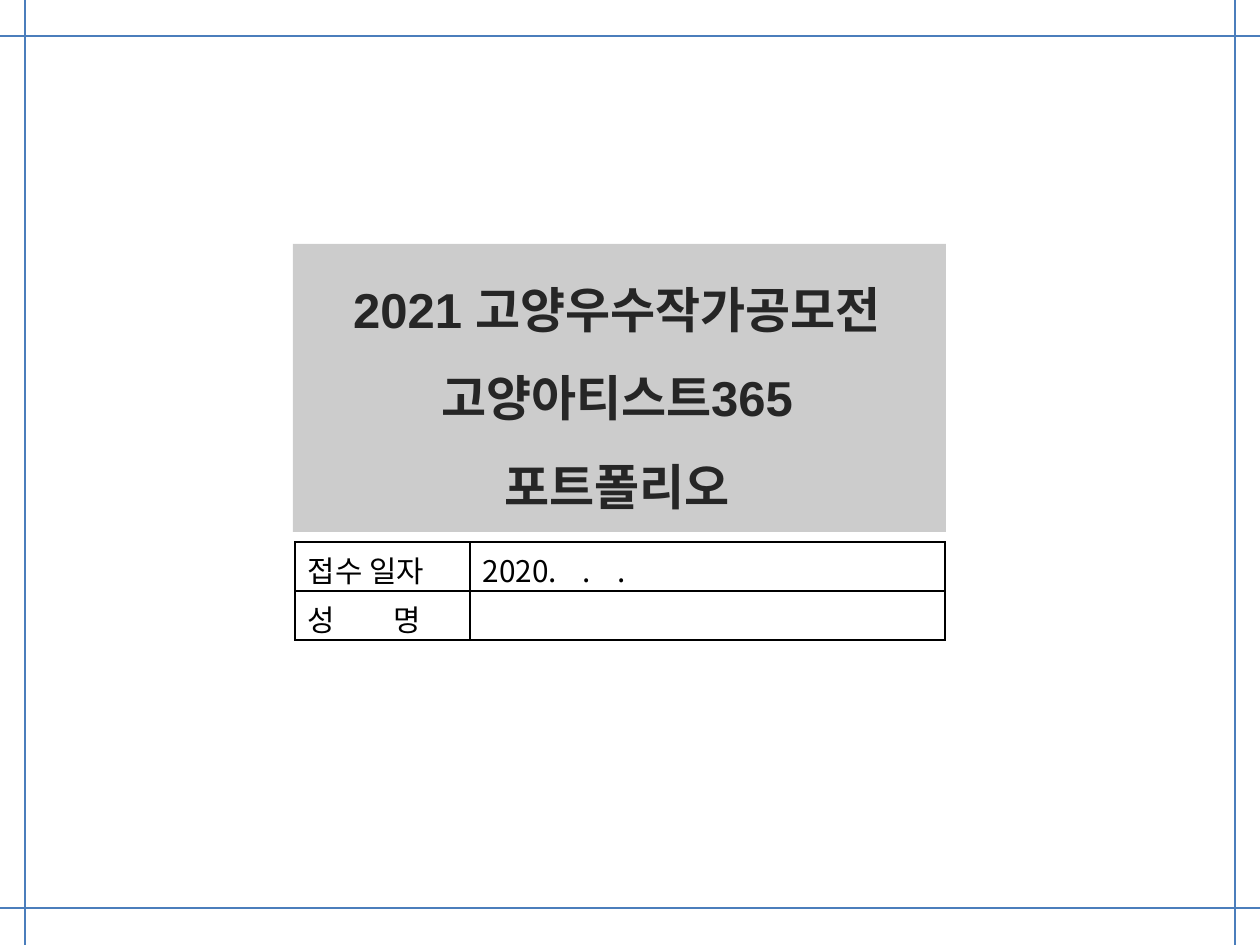
from dataclasses import dataclass

from pptx import Presentation, util as u
from pptx.dml.color import RGBColor
from pptx.enum import shapes, text
from pptx.oxml.ns import qn
from lxml import etree

EMU_PER_PX = 914400 // 126
WIDTH, HEIGHT = 1260, 945


@dataclass(frozen=True)
class Theme:
    guide: str = "4B7EBC"
    panel: str = "000000"
    panel_alpha: int = 20
    title: str = "262626"
    ink: str = "000000"
    title_font: str = "Arial"
    table_font: str = "Noto Sans CJK KR"
    title_size: int = 28
    table_size: int = 17
    guide_width: float = 0.75
    border_width: int = 1


THEME = Theme()
TITLE_LINES = ["2021 고양우수작가공모전", "고양아티스트365", "포트폴리오"]

# Each cell: text and its tab stops in px
FORM_ROWS = [
    [("접수 일자", []), ("2020.\t.\t.", [100, 135])],
    [("성\t명", [86]), ("", [])],
]


def px(value):
    return u.Emu(value * EMU_PER_PX)


def set_font(paragraph, name, size, color, bold=False):
    font = paragraph.font
    font.name, font.size, font.bold = name, u.Pt(size), bold
    font.color.rgb = RGBColor.from_string(color)


def add_guide(slide, x1, y1, x2, y2):
    line = slide.shapes.add_connector(
        shapes.MSO_CONNECTOR.STRAIGHT, px(x1), px(y1), px(x2), px(y2))
    line.line.color.rgb = RGBColor.from_string(THEME.guide)
    line.line.width = u.Pt(THEME.guide_width)
    etree.SubElement(line._element.spPr, qn("a:effectLst"))


def add_title(slide):
    group = slide.shapes.add_group_shape()

    # Translucent panel
    panel = group.shapes.add_shape(
        shapes.MSO_SHAPE.RECTANGLE, px(293), px(244), px(653), px(288))
    panel.shadow.inherit = False
    panel.line.fill.background()
    panel.fill.solid()
    panel.fill.fore_color.rgb = RGBColor.from_string(THEME.panel)
    color = panel._element.spPr.find(qn("a:solidFill"))[0]
    etree.SubElement(color, qn("a:alpha"), val=str(THEME.panel_alpha * 1000))

    # Title lines
    box = group.shapes.add_textbox(px(292), px(244), px(650), px(310))
    frame = box.text_frame
    frame.word_wrap = True
    frame.text = "\n".join(TITLE_LINES)
    for paragraph in frame.paragraphs:
        paragraph.alignment = text.PP_ALIGN.CENTER
        paragraph.line_spacing = 1.5
        set_font(paragraph, THEME.title_font, THEME.title_size, THEME.title, True)


def set_tabs(paragraph, stops):
    properties = paragraph._p.get_or_add_pPr()
    tabs = etree.Element(qn("a:tabLst"))
    for stop in stops:
        etree.SubElement(tabs, qn("a:tab"), pos=str(px(stop)), algn="l")
    properties.insert(0, tabs)


def set_borders(cell):
    properties = cell._tc.get_or_add_tcPr()
    for index, side in enumerate(("lnL", "lnR", "lnT", "lnB")):
        line = etree.Element(qn(f"a:{side}"), w=str(u.Pt(THEME.border_width)))
        fill = etree.SubElement(line, qn("a:solidFill"))
        etree.SubElement(fill, qn("a:srgbClr"), val=THEME.ink)
        properties.insert(index, line)


def fill_cell(cell, content, stops):
    cell.fill.background()
    cell.margin_left = cell.margin_right = u.Inches(0.1)
    cell.margin_top, cell.margin_bottom = u.Inches(0.05), 0
    cell.text = content
    paragraph = cell.text_frame.paragraphs[0]
    set_font(paragraph, THEME.table_font, THEME.table_size, THEME.ink)
    if stops:
        set_tabs(paragraph, stops)
    set_borders(cell)


def add_form(slide):
    table = slide.shapes.add_table(2, 2, px(295), px(542), px(650), px(98)).table
    table.first_row = table.horz_banding = False
    for column, width in zip(table.columns, (175, 475)):
        column.width = px(width)
    for row, cells in zip(table.rows, FORM_ROWS):
        row.height = px(49)
        for cell, (content, stops) in zip(row.cells, cells):
            fill_cell(cell, content, stops)


def main():
    presentation = Presentation()
    presentation.slide_width, presentation.slide_height = px(WIDTH), px(HEIGHT)
    slide = presentation.slides.add_slide(presentation.slide_layouts[6])

    add_title(slide)

    # Guide lines along the page margins
    for y in (36, 908):
        add_guide(slide, 0, y, WIDTH, y)
    for x in (25, 1235):
        add_guide(slide, x, 0, x, HEIGHT)

    add_form(slide)
    presentation.save("out.pptx")


if __name__ == "__main__":
    main()
